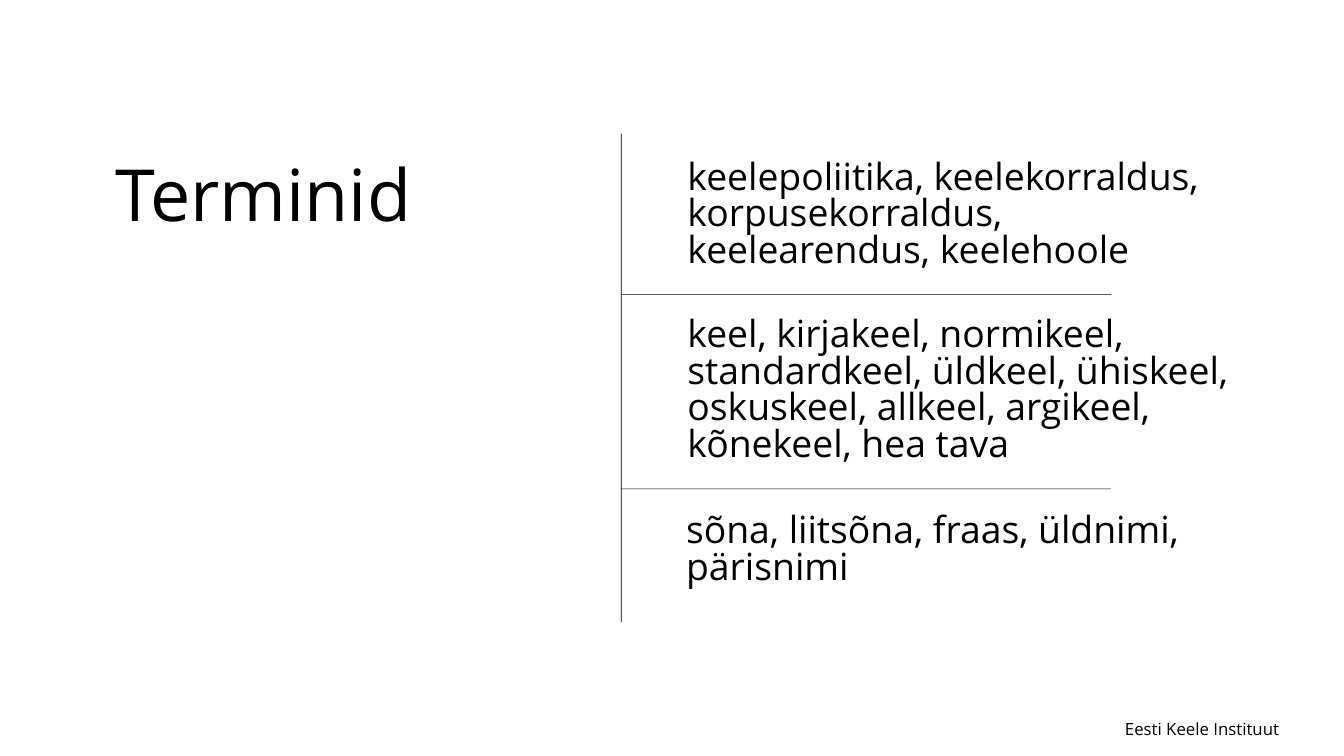
from dataclasses import dataclass

from pptx import Presentation
from pptx.dml.color import RGBColor
from pptx.enum.shapes import MSO_SHAPE
from pptx.enum.text import MSO_ANCHOR, MSO_AUTO_SIZE
from pptx.util import Inches, Pt

RECTANGLE = MSO_SHAPE.RECTANGLE
TOP = MSO_ANCHOR.TOP
NO_AUTOSIZE = MSO_AUTO_SIZE.NONE


@dataclass(frozen=True)
class Theme:
    font: str = "Open Sans"
    ink: RGBColor = RGBColor(0, 0, 0)
    paper: RGBColor = RGBColor(255, 255, 255)
    title: tuple = (77, 84.7)
    body: tuple = (40, 39.2)
    footer: tuple = (18, 28.8)
    rule: float = 0.01


THEME = Theme()

TERM_GROUPS = [
    ("keelepoliitika, keelekorraldus, korpusekorraldus, "
     "keelearendus, keelehoole", (0.99, 0.41, 8.01, 1.65)),
    ("keel, kirjakeel, normikeel, standardkeel, üldkeel, ühiskeel, "
     "oskuskeel, allkeel, argikeel, kõnekeel, hea tava",
     (0.99, 2.75, 8.35, 2.2)),
    ("sõna, liitsõna, fraas, üldnimi, pärisnimi", (0.97, 5.67, 8.03, 1.1)),
]
DIVIDERS = [(0.01, 2.39), (0, 5.28)]
DIVIDER_WIDTH = 7.29


def add_text(page, text, bounds, style):
    size, leading = style
    box = page.shapes.add_textbox(*map(Inches, bounds))
    frame = box.text_frame
    frame.word_wrap = True
    frame.auto_size = NO_AUTOSIZE
    frame.vertical_anchor = TOP
    frame.margin_left = frame.margin_right = 0
    frame.margin_top = frame.margin_bottom = 0
    para = frame.paragraphs[0]
    para.text = text
    para.line_spacing = Pt(leading)
    para.font.name = THEME.font
    para.font.size = Pt(size)
    para.font.color.rgb = THEME.ink


def add_rule(page, bounds):
    rule = page.shapes.add_shape(RECTANGLE, *map(Inches, bounds))
    rule.shadow.inherit = False
    rule.fill.solid()
    rule.fill.fore_color.rgb = THEME.ink
    rule.line.fill.background()


def add_term_list(page, left, top, height):
    add_rule(page, (left, top, THEME.rule, height))
    for shift, drop in DIVIDERS:
        add_rule(page, (left + shift, top + drop, DIVIDER_WIDTH, THEME.rule))
    for terms, (shift, drop, text_width, text_height) in TERM_GROUPS:
        bounds = (left + shift, top + drop, text_width, text_height)
        add_text(page, terms, bounds, THEME.body)


def main():
    deck = Presentation()
    deck.slide_width = Inches(20)
    deck.slide_height = Inches(11.25)
    page = deck.slides.add_slide(deck.slide_layouts[6])
    page.background.fill.solid()
    page.background.fill.fore_color.rgb = THEME.paper

    add_term_list(page, 9.24, 1.99, 7.27)
    add_text(page, "Eesti Keele Instituut", (16.74, 10.6, 2.57, 0.37), THEME.footer)
    add_text(page, "Terminid", (1.72, 2.34, 7.4, 1.19), THEME.title)
    deck.save("out.pptx")


if __name__ == "__main__":
    main()
